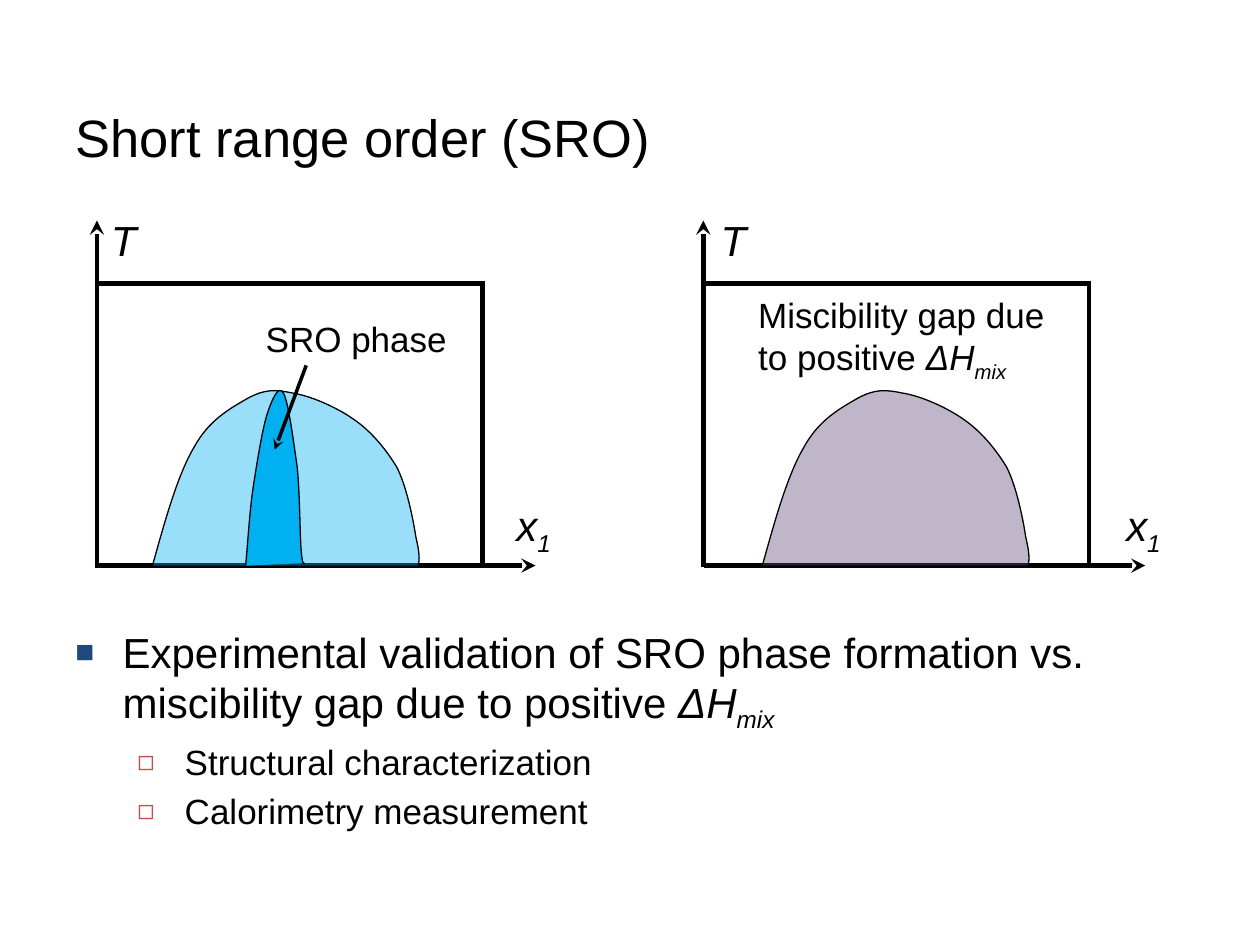
from dataclasses import dataclass
from typing import Any

from lxml.etree import SubElement
from pptx import Presentation
from pptx.dml.color import RGBColor
from pptx.enum.shapes import MSO_CONNECTOR
from pptx.enum.text import MSO_ANCHOR, MSO_AUTO_SIZE, PP_ALIGN
from pptx.oxml.ns import qn
from pptx.util import Pt

BLACK = RGBColor(0x00, 0x00, 0x00)
SKY = RGBColor(0x00, 0xB0, 0xF0)
PURPLE = RGBColor(0x60, 0x4A, 0x7B)
NAVY = RGBColor(0x1F, 0x49, 0x7D)
RED = RGBColor(0xC0, 0x50, 0x4D)

Point = tuple[float, float]

# Start point, then two control points and an end point for each curve
DOME: list[Point] = [
    (87.1, 323.3),
    (94.3, 297.4), (101.5, 271.4), (110.9, 255.6),
    (119.5, 239.8), (131.8, 233.3), (141.8, 227.5),
    (151.2, 222.5), (157, 222.5), (167, 224.6),
    (177.1, 226.1), (192.2, 232.6), (202.3, 239.8),
    (211.7, 246.2), (220.3, 256.3), (226.8, 267.1),
    (232.6, 278.6), (236.2, 297.4), (237.6, 306.7),
    (239.8, 316.1), (239.8, 319.7), (239, 323.3),
]
SRO_PEAK: list[Point] = [
    (140.4, 323.3),
    (141.8, 308.2), (142.6, 293), (144.7, 278.6),
    (146.9, 264.2), (149.8, 246.2), (152.6, 236.9),
    (155.5, 228.2), (159.1, 219.6), (162, 224.6),
    (164.9, 229.7), (167.8, 252.7), (169.9, 267.1),
    (171.4, 282.2), (171.4, 304.6), (172.1, 313.9),
    (172.8, 322.6), (173.5, 322.6), (174.2, 321.8),
]


@dataclass(frozen=True)
class Piece:
    """A run of text with its italic and subscript state."""
    text: str
    italic: bool = False
    subscript: bool = False


@dataclass(frozen=True)
class Bullet:
    pieces: list[Piece]
    size: float
    left: float
    hanging: float
    symbol: str
    color: RGBColor
    percent: int


@dataclass(frozen=True)
class Panel:
    """A phase diagram; its frame and its labels have their own offsets."""
    frame_shift: float
    label_shift: float
    dome_color: RGBColor


PANELS = [Panel(0, 0, SKY), Panel(346.5, 348.5, PURPLE)]
ENTHALPY = [Piece("ΔH", True), Piece("mix", True, True)]
BULLETS = [
    Bullet([Piece("Experimental validation of SRO phase formation vs. "
                  "miscibility gap due to positive "), *ENTHALPY],
           24, 27, 27, "■", NAVY, 75),
    *(Bullet([Piece(text)], 20, 62.5, 27, "◻", RED, 80)
      for text in ("Structural characterization", "Calorimetry measurement")),
]


def apply_format(target: Any, values: dict[str, Any]) -> None:
    for name, value in values.items():
        setattr(target, name, value)


def add_pieces(paragraph: Any, pieces: list[Piece], size: float) -> None:
    for piece in pieces:
        run = paragraph.add_run()
        run.text = piece.text
        apply_format(run.font, {"name": "Arial", "size": Pt(size), "italic": piece.italic})
        run.font.color.rgb = BLACK
        if piece.subscript:
            run._r.get_or_add_rPr().set("baseline", "-25000")


def add_text_box(slide: Any, left: float, top: float, width: float, height: float,
                 wrap: bool = True) -> Any:
    shape = slide.shapes.add_textbox(Pt(left), Pt(top), Pt(width), Pt(height))
    shape.text_frame.word_wrap = wrap
    return shape.text_frame


def add_label(slide: Any, left: float, top: float, width: float, height: float,
              pieces: list[Piece], size: float, wrap: bool = False) -> None:
    frame = add_text_box(slide, left, top, width, height, wrap)
    frame.auto_size = MSO_AUTO_SIZE.SHAPE_TO_FIT_TEXT
    add_pieces(frame.paragraphs[0], pieces, size)


def add_line(slide: Any, start: Point, end: Point, weight: float = 2.75,
             arrow: bool = False) -> None:
    connector = slide.shapes.add_connector(
        MSO_CONNECTOR.STRAIGHT, *(Pt(value) for value in (*start, *end)))
    connector.line.color.rgb = BLACK
    connector.line.width = Pt(weight)
    if arrow:
        SubElement(connector.line._get_or_add_ln(), qn("a:tailEnd"), type="stealth")
    SubElement(connector._element.spPr, qn("a:effectLst"))


def add_curve(slide: Any, points: list[Point], shift: float, color: RGBColor,
              opacity: int = 100) -> None:
    """Draw a filled outline whose points are cubic Bezier controls."""
    start, *others = [(Pt(x + shift), Pt(y)) for x, y in points]
    builder = slide.shapes.build_freeform(*start, scale=1.0)
    builder.add_line_segments(others, close=False)
    shape = builder.convert_to_shape()
    path = shape._element.spPr.find(".//" + qn("a:path"))
    segments = path.findall(qn("a:lnTo"))
    for index in range(0, len(segments), 3):
        curve = SubElement(path, qn("a:cubicBezTo"))
        for segment in segments[index:index + 3]:
            curve.append(segment[0])
            path.remove(segment)
    shape.shadow.inherit = False
    shape.fill.solid()
    shape.fill.fore_color.rgb = color
    if opacity < 100:
        fill_color = shape._element.spPr.find(qn("a:solidFill"))[0]
        SubElement(fill_color, qn("a:alpha"), val=str(opacity * 1000))
    shape.line.color.rgb = BLACK
    shape.line.width = Pt(0.75)


def add_panel(slide: Any, panel: Panel) -> None:
    shift, label_shift = panel.frame_shift, panel.label_shift
    axis, right, top, base = 55.4 + shift, 275.8 + shift, 162, 323.2
    add_line(slide, (axis, 324), (axis, 126), arrow=True)
    add_line(slide, (54 + label_shift, base), (306 + label_shift, base), arrow=True)
    add_line(slide, (right + 1.4, top), (axis, top))
    add_line(slide, (right, top - 1.4), (right, base))
    add_label(slide, 288 + label_shift, 282.2, 35.3, 36,
              [Piece("x", True), Piece("1", True, True)], 24)
    add_label(slide, 56.2 + label_shift, 118.8, 29.5, 36, [Piece("T", True)], 24)
    add_curve(slide, DOME, label_shift, panel.dome_color, 40)


def add_bullets(slide: Any) -> None:
    frame = add_text_box(slide, 36, 354.2, 648, 138.2)
    for index, bullet in enumerate(BULLETS):
        paragraph = frame.add_paragraph() if index else frame.paragraphs[0]
        properties = paragraph._p.get_or_add_pPr()
        properties.set("marL", str(Pt(bullet.left)))
        properties.set("indent", str(-Pt(bullet.hanging)))
        color = SubElement(properties, qn("a:buClr"))
        SubElement(color, qn("a:srgbClr"), val=str(bullet.color))
        SubElement(properties, qn("a:buSzPct"), val=str(bullet.percent * 1000))
        SubElement(properties, qn("a:buFont"), typeface="Arial")
        SubElement(properties, qn("a:buChar"), char=bullet.symbol)
        if index:
            paragraph.space_before = Pt(bullet.size * 0.2)
        add_pieces(paragraph, bullet.pieces, bullet.size)


def add_title(slide: Any, text: str) -> None:
    title = slide.shapes.title
    apply_format(title, {"left": Pt(36), "top": Pt(36), "width": Pt(648), "height": Pt(84)})
    title.text_frame.vertical_anchor = MSO_ANCHOR.MIDDLE
    paragraph = title.text_frame.paragraphs[0]
    paragraph.alignment = PP_ALIGN.LEFT
    add_pieces(paragraph, [Piece(text)], 30)


def main() -> None:
    presentation = Presentation()
    apply_format(presentation, {"slide_width": Pt(720), "slide_height": Pt(540)})
    slide = presentation.slides.add_slide(presentation.slide_layouts[5])
    add_title(slide, "Short range order (SRO)")
    add_bullets(slide)
    for panel in PANELS:
        add_panel(slide, panel)
    add_curve(slide, SRO_PEAK, 0, SKY)
    add_label(slide, 144.7, 177.8, 118.8, 31.7, [Piece("SRO phase")], 20)
    add_line(slide, (175, 208.8), (157, 257), weight=2, arrow=True)
    add_label(slide, 426.2, 164.2, 180, 55.4,
              [Piece("Miscibility gap due to positive "), *ENTHALPY], 20, wrap=True)
    presentation.save("out.pptx")


if __name__ == "__main__":
    main()
